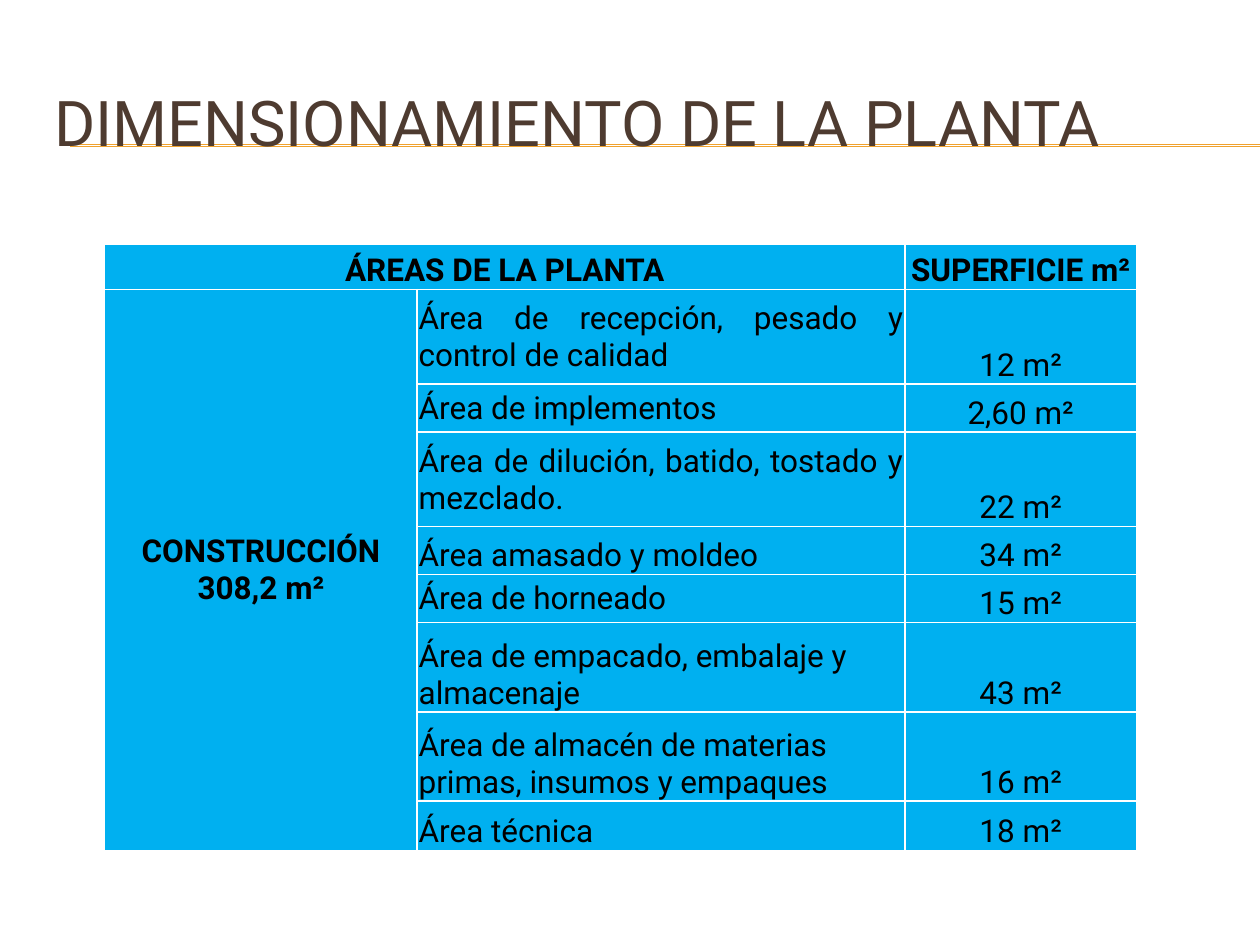
from dataclasses import dataclass

import pptx
import pptx.dml.color
import pptx.enum.shapes
import pptx.enum.text
import pptx.oxml
import pptx.oxml.ns
import pptx.util

Cm = pptx.util.Cm
Pt = pptx.util.Pt
Align = pptx.enum.text.PP_ALIGN
Anchor = pptx.enum.text.MSO_ANCHOR


@dataclass(frozen=True)
class Theme:
    font: str = "Roboto"
    title_color: str = "4E3B30"
    rule_color: str = "F0A22E"
    cell_color: str = "00B0F0"
    border_color: str = "FFFFFF"
    text_color: str = "000000"
    title_size: int = 36
    table_size: int = 18
    rule_width: float = 0.75
    border_width: float = 1


THEME = Theme()
COLUMN_WIDTHS = (6.3, 9.83, 4.67)
HEADER_HEIGHT = 0.91
JUSTIFIED = (Align.JUSTIFY, Anchor.MIDDLE)
LEFT = (Align.LEFT, Anchor.BOTTOM)
AREAS = (
    ("Área de recepción, pesado y control de calidad", "12 m²", 1.9, JUSTIFIED),
    ("Área de implementos", "2,60 m²", 0.97, JUSTIFIED),
    ("Área de dilución, batido, tostado y mezclado.", "22 m²", 1.9, JUSTIFIED),
    ("Área amasado y moldeo", "34 m²", 0.97, LEFT),
    ("Área de horneado", "15 m²", 0.97, JUSTIFIED),
    ("Área de empacado, embalaje y almacenaje", "43 m²", 1.8, LEFT),
    ("Área de almacén de materias primas, insumos y empaques", "16 m²", 1.8, LEFT),
    ("Área técnica", "18 m²", 0.99, LEFT),
)


def rgb(color):
    return pptx.dml.color.RGBColor.from_string(color)


def format_text(text_frame, size, color, align, bold=False):
    for paragraph in text_frame.paragraphs:
        paragraph.alignment = align
        for run in paragraph.runs:
            run.font.name = THEME.font
            run.font.size = Pt(size)
            run.font.bold = bold
            run.font.color.rgb = rgb(color)


def add_rule(slide, top):
    rule = slide.shapes.add_connector(
        pptx.enum.shapes.MSO_CONNECTOR.STRAIGHT, Cm(1.42), Cm(top), Cm(25.4), Cm(top))
    rule.line.color.rgb = rgb(THEME.rule_color)
    rule.line.width = Pt(THEME.rule_width)
    properties = rule._element.spPr
    properties.append(pptx.oxml.parse_xml(f'<a:effectLst {pptx.oxml.ns.nsdecls("a")}/>'))


def place_title(slide, text):
    title = slide.shapes.title
    title.left, title.top, title.width, title.height = Cm(0.84), Cm(1.27), Cm(24.13), Cm(2.34)
    title.text_frame.text = text
    title.text_frame.vertical_anchor = Anchor.MIDDLE
    format_text(title.text_frame, THEME.title_size, THEME.title_color, Align.LEFT)
    title._element.getparent().append(title._element)


def style_cell(cell):
    cell.fill.solid()
    cell.fill.fore_color.rgb = rgb(THEME.cell_color)
    cell.margin_left = cell.margin_top = cell.margin_right = Cm(0.03)
    cell.margin_bottom = 0
    properties = cell._tc.get_or_add_tcPr()
    for index, side in enumerate(("lnL", "lnR", "lnT", "lnB")):
        properties.insert(index, pptx.oxml.parse_xml(
            f'<a:{side} {pptx.oxml.ns.nsdecls("a")} w="{Pt(THEME.border_width)}"><a:solidFill>'
            f'<a:srgbClr val="{THEME.border_color}"/></a:solidFill></a:{side}>'))


def write_cell(cell, text, align=Align.CENTER, anchor=Anchor.BOTTOM, bold=False):
    cell.text_frame.text = text
    cell.vertical_anchor = anchor
    format_text(cell.text_frame, THEME.table_size, THEME.text_color, align, bold)


def add_area_table(slide):
    heights = [HEADER_HEIGHT] + [height for _, _, height, _ in AREAS]
    table = slide.shapes.add_table(
        len(heights), len(COLUMN_WIDTHS), Cm(2.11), Cm(4.93),
        Cm(sum(COLUMN_WIDTHS)), Cm(sum(heights))).table
    table.first_row = table.horz_banding = False
    for column, width in zip(table.columns, COLUMN_WIDTHS):
        column.width = Cm(width)
    for row, height in zip(table.rows, heights):
        row.height = Cm(height)
    for cell in table.iter_cells():
        style_cell(cell)
    table.cell(0, 0).merge(table.cell(0, 1))
    table.cell(1, 0).merge(table.cell(len(AREAS), 0))
    write_cell(table.cell(0, 0), "ÁREAS DE LA PLANTA", bold=True)
    write_cell(table.cell(0, 2), "SUPERFICIE m²", bold=True)
    write_cell(table.cell(1, 0), "CONSTRUCCIÓN\n308,2 m²", anchor=Anchor.MIDDLE, bold=True)
    for row, (area, surface, _, (align, anchor)) in enumerate(AREAS, start=1):
        write_cell(table.cell(row, 1), area, align, anchor)
        write_cell(table.cell(row, 2), surface)


def main():
    presentation = pptx.Presentation()
    presentation.slide_width = Cm(25.4)
    presentation.slide_height = Cm(19.05)
    slide = presentation.slides.add_slide(presentation.slide_layouts[5])
    for top in (2.92, 2.95):
        add_rule(slide, top)
    place_title(slide, "DIMENSIONAMIENTO DE LA PLANTA")
    add_area_table(slide)
    presentation.save("out.pptx")


if __name__ == "__main__":
    main()
